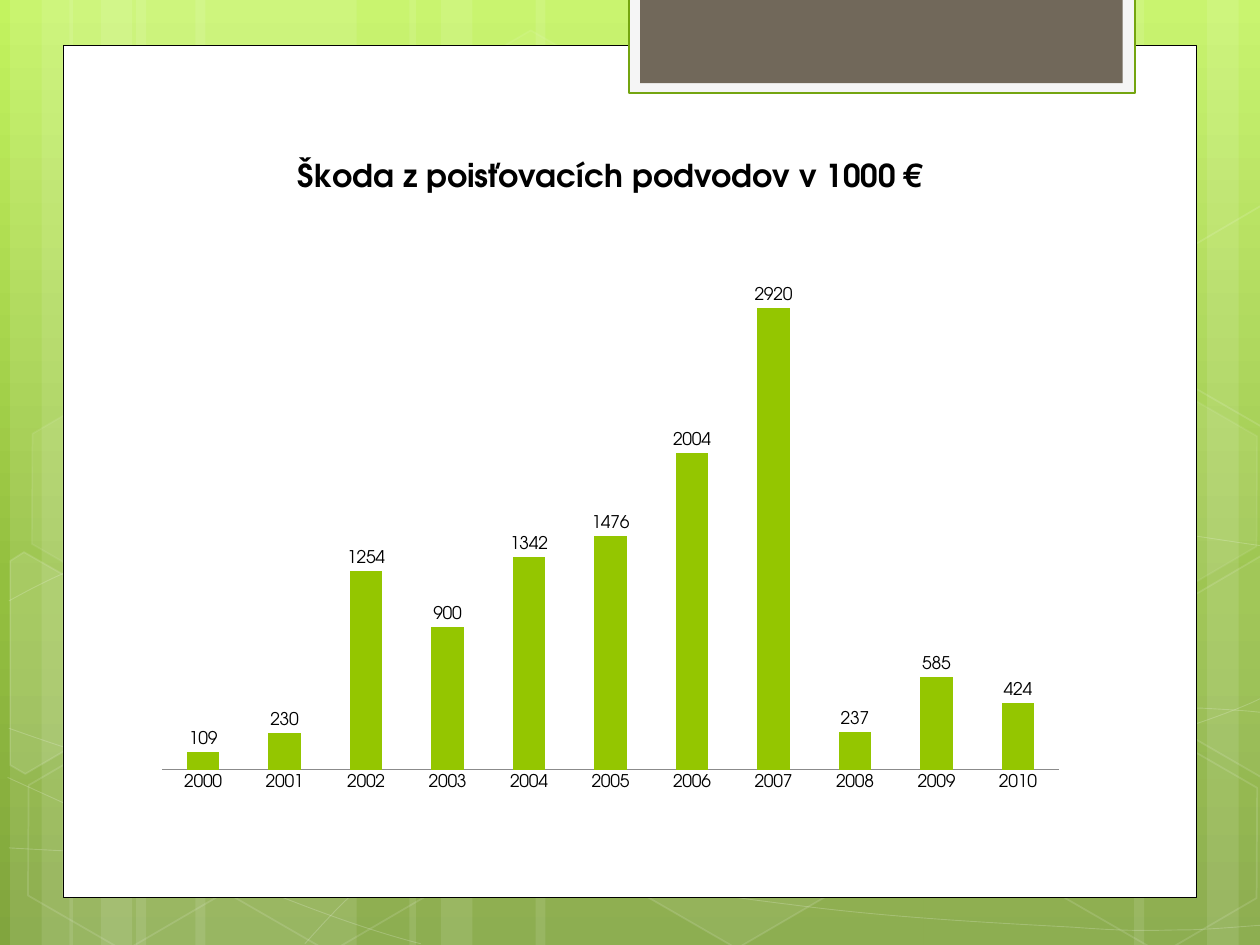
from math import cos, radians, sin

from lxml import etree
from pptx import Presentation
from pptx.chart.data import CategoryChartData
from pptx.dml.color import RGBColor
from pptx.enum.chart import XL_CHART_TYPE, XL_LABEL_POSITION, XL_TICK_LABEL_POSITION, XL_TICK_MARK
from pptx.enum.shapes import MSO_SHAPE
from pptx.oxml import parse_xml
from pptx.oxml.ns import nsdecls, qn
from pptx.util import Inches, Pt

RECT, HEXAGON = MSO_SHAPE.RECTANGLE, MSO_SHAPE.HEXAGON
COLUMN = XL_CHART_TYPE.COLUMN_CLUSTERED
OUTSIDE = XL_LABEL_POSITION.OUTSIDE_END
NEXT_TO_AXIS = XL_TICK_LABEL_POSITION.NEXT_TO_AXIS
NO_TICK = XL_TICK_MARK.NONE

FONT = "TeX Gyre Adventor"
COLORS = {"white": "FFFFFF", "black": "000000", "bar": "94C600", "axis": "8B8B8B",
          "tab": "F5F5F5", "tab_line": "74A510", "tab_core": "71685A"}
BACKGROUND = [(0, "C3F35F"), (62, "93BF3F"), (100, "81A53E")]

# Chart content
TITLE = "Škoda z poisťovacích podvodov v 1000 €"
YEARS = [str(year) for year in range(2000, 2011)]
DAMAGE = [109, 230, 1254, 900, 1342, 1476, 2004, 2920, 237, 585, 424]
CHART_BOX = (1.14, 1.07, 7.41, 5.31)

# Backdrop stripes: left, width, rotation
STRIPES = [(1.08, 1.75, 0), (0.08, 0.5, 0), (0.33, 0.83, 0), (1.55, 1.75, 0), (0.55, 0.5, 0),
           (0.8, 0.83, 0), (7.33, 1.75, 180), (9.58, 0.5, 180), (9, 0.83, 180),
           (4.25, 3.08, 0), (3.25, 0.5, 0), (3.5, 0.83, 0)]

# Curves: start point, then cubic segments (control, control, end) or a straight one (end)
CURVES = [
    [(0.07, 6.73), (0.61, 6.76, 1.15, 6.79, 1.9, 6.78), (2.65, 6.77, 3.58, 6.75, 4.58, 6.65),
     (5.58, 6.55, 7, 6.36, 7.92, 6.17), (8.83, 5.98, 9.77, 5.68, 10.07, 5.51)],
    [(0.07, 4.77), (0.36, 4.61, 0.65, 4.46, 1.21, 4.31), (1.78, 4.16, 2.59, 3.94, 3.47, 3.87),
     (4.36, 3.8, 5.44, 3.79, 6.54, 3.87), (7.64, 3.95, 9.47, 4.26, 10.07, 4.34)],
    [(0.06, 6.17), (1.27, 6.72, 2.47, 7.27, 3.34, 7.49)],
    [(0.07, 5.78), (0.38, 5.89, 0.7, 6, 1.28, 6.16), (1.86, 6.31, 2.73, 6.56, 3.57, 6.73),
     (4.4, 6.9, 5.45, 7.08, 6.28, 7.18), (7.11, 7.29, 8, 7.33, 8.53, 7.36),
     (9.05, 7.4, 9.19, 7.38, 9.45, 7.38), (9.71, 7.37, 9.89, 7.35, 10.07, 7.34)],
    [(2.42, 7.49), (2.6, 7.29, 2.78, 7.09, 3.02, 6.91), (3.26, 6.73, 3.6, 6.53, 3.88, 6.39),
     (4.16, 6.25, 4.33, 6.19, 4.7, 6.09), (5.06, 5.99, 5.73, 5.85, 6.08, 5.78),
     (6.44, 5.71, 6.49, 5.71, 6.8, 5.69), (7.11, 5.66, 7.6, 5.63, 7.94, 5.62),
     (8.29, 5.61, 8.86, 5.62, 8.86, 5.62), (9.53, 5.62),
     (9.71, 5.63, 9.88, 5.64, 9.97, 5.65), (10.06, 5.66, 10.03, 5.65, 10.06, 5.66)],
]

# Hexagons: left, top, fill opacity (None for no fill), line opacity
TILT = 30
HEXAGONS = [(3.34, 0.36, 4, 8), (4.97, 5.89, 6, 12), (0.11, 5.91, None, 12), (0.14, 3.12, 7, 8),
            (1.74, 5.92, None, 12), (8.34, 5.93, None, 12), (8.34, 3.14, 7, 8)]

# Hexagons cut off by the slide edge: centre, tilted points, fill opacity
CUT_HEXAGONS = [
    ((0.36, 5.35), [(0.08, 4.45), (0.19, 4.38), (0.96, 4.82), (0.95, 5.7), (0.2, 6.14),
                    (0.08, 6.07)], 10),
    ((9.85, 5.2), [(9.26, 4.85), (10.01, 4.41), (10.09, 4.46), (10.09, 6.13), (10.02, 6.17),
                   (9.26, 5.73)], 4),
    ((9.85, 2.41), [(9.26, 2.07), (10.01, 1.63), (10.1, 1.68), (10.09, 3.35), (10.02, 3.39),
                    (9.26, 2.95)], None),
]

# Panel and tab: box, fill, line colour, line width
PANELS = [((0.5, 0.36, 9, 6.76), "white", "black", 0.5),
          ((4.99, -0.02, 4.02, 0.76), "tab", "tab_line", 1.25),
          ((5.08, -0.02, 3.83, 0.68), "tab_core", None, 0)]


def rgb(name):
    return RGBColor.from_string(COLORS[name])


def paint(fill, color, opacity=100):
    """Solid colour, made translucent when the opacity is below 100."""
    fill.solid()
    fill.fore_color.rgb = rgb(color)
    if opacity < 100:
        clr = fill._xPr.find(qn("a:solidFill"))[0]
        etree.SubElement(clr, qn("a:alpha")).set("val", str(opacity * 1000))


def style(sp, fill=None, opacity=100, line=None, width=0, line_opacity=100):
    sp.shadow.inherit = False
    if fill and opacity:
        paint(sp.fill, fill, opacity)
    else:
        sp.fill.background()
    if line:
        sp.line.width = Pt(width)
        paint(sp.line.fill, line, line_opacity)
    else:
        sp.line.fill.background()


def add_shape(kind, box):
    return s.shapes.add_shape(kind, *map(Inches, box))


def add_outline(points, close):
    pts = [(Inches(x), Inches(y)) for x, y in points]
    builder = s.shapes.build_freeform(*pts[0])
    builder.add_line_segments(pts[1:], close=close)
    return builder.convert_to_shape()


def add_curve(curve):
    """Outline through the end points, its lines then bent into cubic segments."""
    sp = add_outline([seg[-2:] for seg in curve], False)
    lines = list(sp._element.iter(qn("a:lnTo")))
    for line, seg in zip(lines, curve[1:]):
        if len(seg) == 6:
            line.tag = qn("a:cubicBezTo")
            line.remove(line[0])
            for x, y in zip(seg[::2], seg[1::2]):
                pt = etree.SubElement(line, qn("a:pt"))
                pt.set("x", str(Inches(x) - sp.left))
                pt.set("y", str(Inches(y) - sp.top))
    return sp


def turn(point, centre, degrees):
    dx, dy = point[0] - centre[0], point[1] - centre[1]
    c, n = cos(radians(degrees)), sin(radians(degrees))
    return centre[0] + dx * c - dy * n, centre[1] + dx * n + dy * c


def set_font(font, **values):
    for key, value in {"name": FONT, **values}.items():
        setattr(font, key, value)
    font.color.rgb = rgb("black")


prs = Presentation()
prs.slide_width, prs.slide_height = Inches(10), Inches(7.5)
s = prs.slides.add_slide(prs.slide_layouts[6])

# Background gradient, top to bottom
fill = s.background.fill
fill.gradient()
fill.gradient_angle = 270
stops = s._element.find(".//" + qn("a:gsLst"))
for gs in list(stops):
    stops.remove(gs)
for pos, color in BACKGROUND:
    stops.append(parse_xml(f'<a:gs {nsdecls("a")} pos="{pos * 1000}"><a:srgbClr val="{color}"/></a:gs>'))

# Backdrop
for left, width, rotation in STRIPES:
    sp = add_shape(RECT, (left, 0, width, 7.5))
    sp.rotation = rotation
    style(sp, "white", 10)
for curve in CURVES:
    style(add_curve(curve), line="white", width=0.5, line_opacity=20)
for left, top, opacity, line_opacity in HEXAGONS:
    sp = add_shape(HEXAGON, (left, top, 1.75, 1.52))
    sp.rotation = TILT
    sp.adjustments[0] = 0.285
    style(sp, "white", opacity, "white", 1, line_opacity)
for centre, points, opacity in CUT_HEXAGONS:
    sp = add_outline([turn(point, centre, -TILT) for point in points], True)
    sp.rotation = TILT
    style(sp, "white", opacity, "white", 1, 12)

# White panel and tab
for box, color, line, width in PANELS:
    style(add_shape(RECT, box), color, line=line, width=width)

# Chart
data = CategoryChartData()
data.categories = YEARS
data.add_series("Series 1", DAMAGE)
chart = s.shapes.add_chart(COLUMN, *map(Inches, CHART_BOX), data).chart
set_font(chart.font, size=Pt(10))
chart.has_legend = False
chart.has_title = True
tf = chart.chart_title.text_frame
tf.text = TITLE
set_font(tf.paragraphs[0].runs[0].font, size=Pt(18), bold=True)

plot = chart.plots[0]
plot.gap_width = 150
plot.vary_by_categories = False
paint(plot.series[0].format.fill, "bar")
plot.has_data_labels = True
labels = plot.data_labels
labels.show_value = True
labels.position = OUTSIDE
set_font(labels.font, size=Pt(10))

value_axis, year_axis = chart.value_axis, chart.category_axis
for key, value in {"visible": False, "has_major_gridlines": False,
                   "minimum_scale": 0, "maximum_scale": 3500}.items():
    setattr(value_axis, key, value)
year_axis.major_tick_mark = NO_TICK
year_axis.tick_label_position = NEXT_TO_AXIS
year_axis.format.line.width = Pt(0.75)
paint(year_axis.format.line.fill, "axis")

prs.save("out.pptx")
